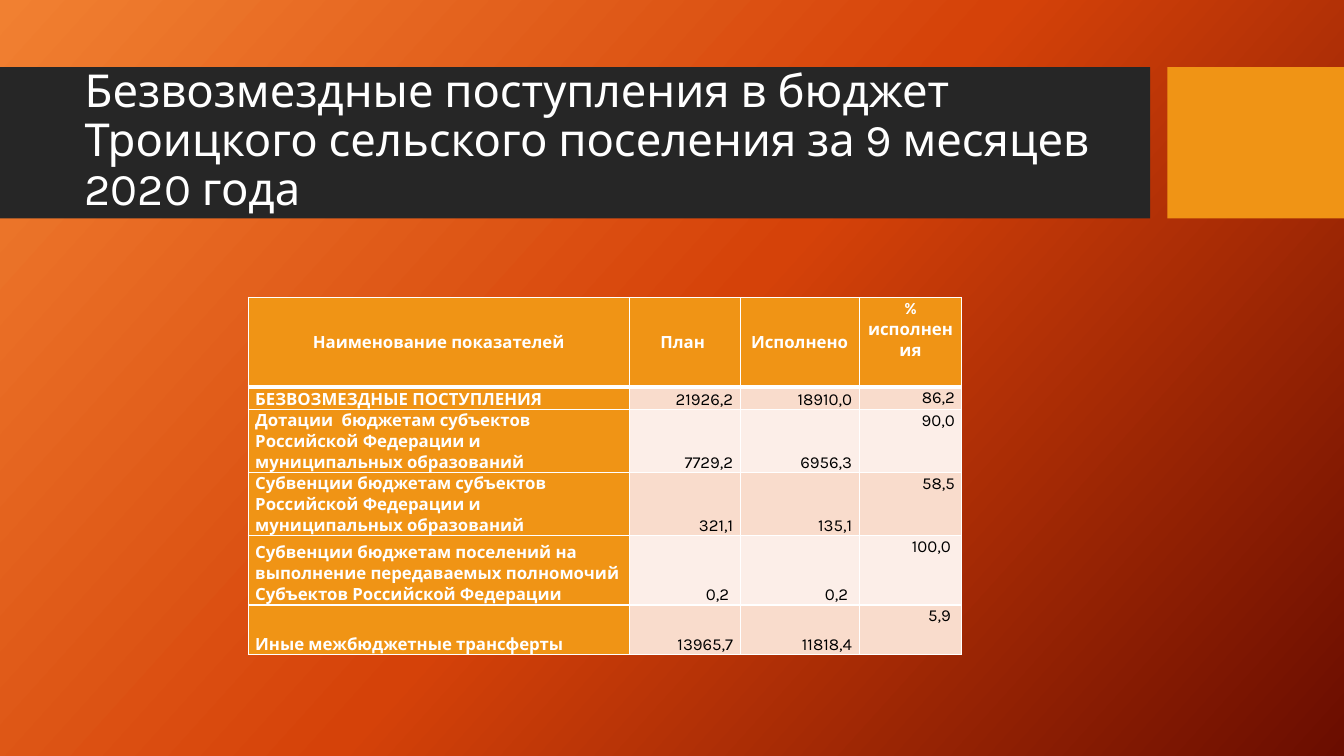
import copy
from dataclasses import dataclass

import pptx
import pptx.dml.color
import pptx.enum.shapes
import pptx.enum.text
import pptx.oxml
import pptx.oxml.ns
import pptx.util

Pt = pptx.util.Pt
ALIGN = pptx.enum.text.PP_ALIGN
ANCHOR = pptx.enum.text.MSO_ANCHOR

FONT = "Karla"
WHITE = "FFFFFF"
BLACK = "000000"
ORANGE = "F09415"
CHARCOAL = "262626"
BAND_FILLS = ("F9DCCC", "FCEEE8")
BACKGROUND_STOPS = ((0, "F18031"), (50, "D54209"), (100, "6A0D00"))
BACKGROUND_ANGLE = 42

COLUMN_WIDTHS = (272.2, 79.2, 85, 73.4)
HEADINGS = ("Наименование показателей", "План ", "Исполнено", "%\nисполнения")


@dataclass(frozen=True)
class Bar:
    left: float
    width: float
    color: str


@dataclass(frozen=True)
class Income:
    height: float
    name: str
    plan: str
    actual: str
    percent: str


BARS = (Bar(0, 821.5, CHARCOAL), Bar(833.8, 126.2, ORANGE))

INCOMES = (
    Income(16, "БЕЗВОЗМЕЗДНЫЕ ПОСТУПЛЕНИЯ", "21926,2", "18910,0", "86,2"),
    Income(37.5, "Дотации  бюджетам субъектов Российской Федерации и муниципальных образований",
           "7729,2", "6956,3", "90,0"),
    Income(41.8, "Субвенции бюджетам субъектов Российской Федерации и муниципальных образований",
           "321,1", "135,1", "58,5"),
    Income(49.8, "Субвенции бюджетам поселений на выполнение передаваемых полномочий "
           "Субъектов Российской Федерации", "0,2 ", "0,2 ", "100,0 "),
    Income(35.2, "Иные межбюджетные трансферты", "13965,7", "11818,4", "5,9 "),
)


def rgb(color: str) -> pptx.dml.color.RGBColor:
    return pptx.dml.color.RGBColor.from_string(color)


def write_text(frame, text: str, *, size: float = 12, color: str = WHITE,
               bold: bool = False, align=ALIGN.LEFT, spacing: float = 1.07) -> None:
    frame.word_wrap = True
    for index, line in enumerate(text.split("\n")):
        paragraph = frame.add_paragraph() if index else frame.paragraphs[0]
        paragraph.alignment = align
        paragraph.line_spacing = spacing
        paragraph.space_before = paragraph.space_after = Pt(0)
        run = paragraph.add_run()
        run.text = line
        run.font.name = FONT
        run.font.size = Pt(size)
        run.font.bold = bold
        run.font.color.rgb = rgb(color)


def paint_background(slide) -> None:
    fill = slide.background.fill
    fill.gradient()
    fill.gradient_angle = 360 - BACKGROUND_ANGLE
    first_stop = fill.gradient_stops[0]._gs
    first_stop.addnext(copy.deepcopy(first_stop))
    for stop, (position, color) in zip(fill.gradient_stops, BACKGROUND_STOPS):
        stop.position = position / 100
        stop.color.rgb = rgb(color)


def draw_bar(slide, bar: Bar) -> None:
    shape = slide.shapes.add_shape(
        pptx.enum.shapes.MSO_SHAPE.RECTANGLE,
        Pt(bar.left), Pt(48), Pt(bar.width), Pt(108))
    shape.shadow.inherit = False
    shape.fill.solid()
    shape.fill.fore_color.rgb = rgb(bar.color)
    shape.line.fill.background()


def place_title(slide) -> None:
    title = slide.shapes.title
    slide.shapes._spTree.append(title._element)
    title.left, title.top, title.width, title.height = Pt(53.3), Pt(59), Pt(756.7), Pt(85)
    frame = title.text_frame
    frame.auto_size = pptx.enum.text.MSO_AUTO_SIZE.NONE
    frame.vertical_anchor = ANCHOR.MIDDLE
    write_text(frame, "Безвозмездные поступления в бюджет Троицкого сельского "
               "поселения за 9 месяцев 2020 года", size=32.4, spacing=0.9)


def add_border(cell, side: str, width: float) -> None:
    cell._tc.get_or_add_tcPr().append(pptx.oxml.parse_xml(
        f'<a:{side} {pptx.oxml.ns.nsdecls("a")} w="{Pt(width)}"><a:solidFill>'
        f'<a:srgbClr val="{WHITE}"/></a:solidFill></a:{side}>'))


def fill_cell(cell, text: str, row: int, column: int) -> None:
    is_header = row == 0
    is_label = is_header or column == 0
    is_last_column = column == len(COLUMN_WIDTHS) - 1
    cell.margin_left = cell.margin_right = Pt(5)
    cell.margin_top = cell.margin_bottom = Pt(0)
    if is_last_column:
        cell.vertical_anchor = ANCHOR.TOP
    else:
        cell.vertical_anchor = ANCHOR.MIDDLE if is_header else ANCHOR.BOTTOM
    if is_header:
        align = ALIGN.CENTER
    else:
        align = ALIGN.LEFT if is_label else ALIGN.RIGHT
    write_text(cell.text_frame, text, color=WHITE if is_label else BLACK,
               bold=is_label, align=align)
    for side in ("lnL", "lnR", "lnT", "lnB"):
        thick = (is_header and side == "lnB") or (row == 1 and side == "lnT")
        add_border(cell, side, 3 if thick else 1)
    cell.fill.solid()
    cell.fill.fore_color.rgb = rgb(ORANGE if is_label else BAND_FILLS[(row - 1) % 2])


def draw_table(slide) -> None:
    rows = [HEADINGS] + [(item.name, item.plan, item.actual, item.percent) for item in INCOMES]
    heights = [64] + [item.height for item in INCOMES]
    table = slide.shapes.add_table(
        len(rows), len(COLUMN_WIDTHS), Pt(177.3), Pt(212.4),
        Pt(sum(COLUMN_WIDTHS)), Pt(sum(heights))).table
    for column, width in zip(table.columns, COLUMN_WIDTHS):
        column.width = Pt(width)
    for row, height in zip(table.rows, heights):
        row.height = Pt(height)
    for row_index, texts in enumerate(rows):
        for column_index, text in enumerate(texts):
            fill_cell(table.cell(row_index, column_index), text, row_index, column_index)


def main() -> None:
    presentation = pptx.Presentation()
    presentation.slide_width = Pt(960)
    presentation.slide_height = Pt(540)
    slide = presentation.slides.add_slide(presentation.slide_layouts.get_by_name("Title Only"))
    paint_background(slide)
    for bar in BARS:
        draw_bar(slide, bar)
    place_title(slide)
    draw_table(slide)
    presentation.save("out.pptx")


if __name__ == "__main__":
    main()
